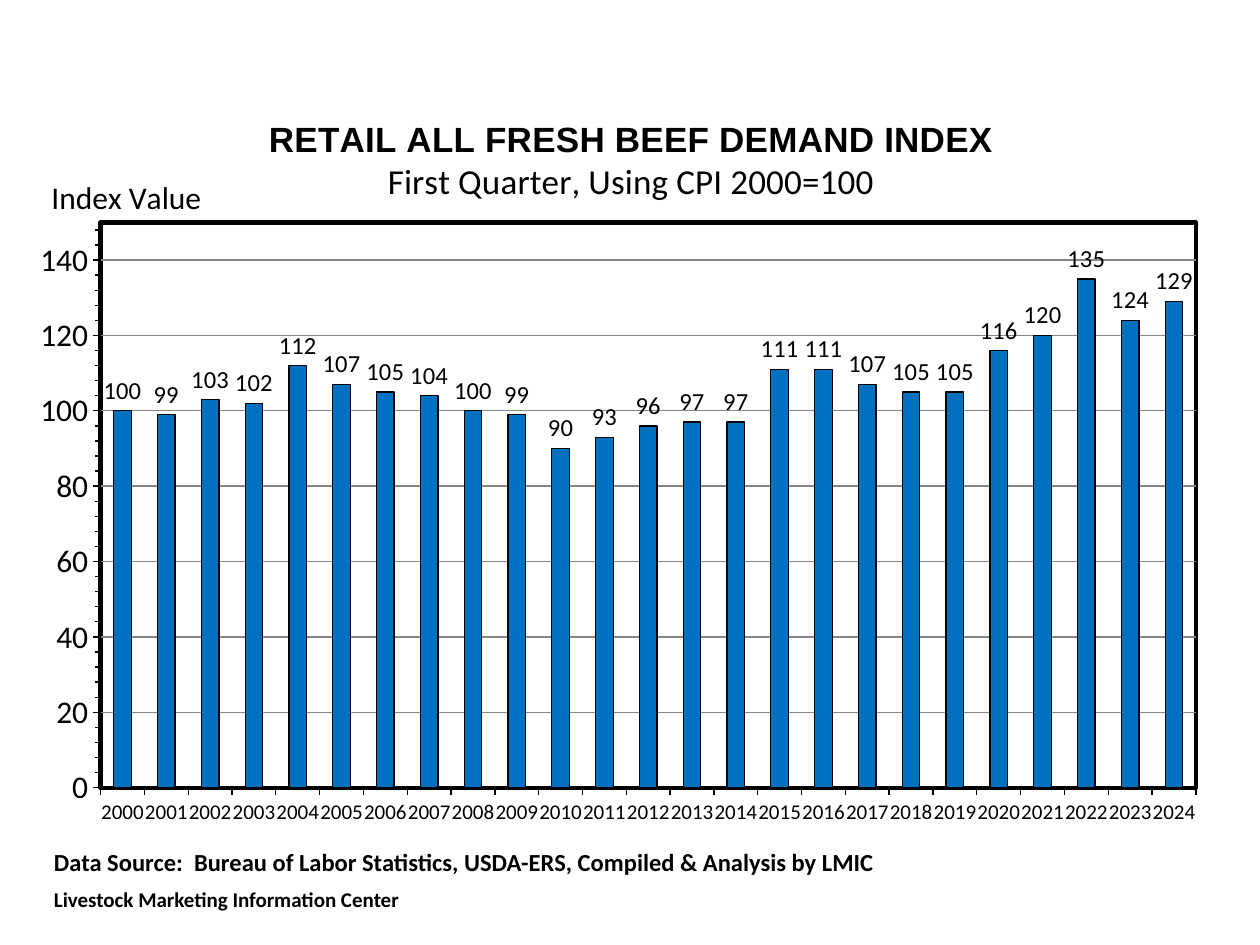
"""Build the retail all fresh beef demand index slide."""
from lxml.etree import SubElement
from pptx import Presentation
from pptx.chart.data import CategoryChartData
from pptx.dml.color import RGBColor
from pptx.enum.chart import XL_CHART_TYPE as ChartType
from pptx.enum.chart import XL_LABEL_POSITION as LabelPos
from pptx.enum.chart import XL_TICK_MARK as Tick
from pptx.oxml import parse_xml
from pptx.oxml.ns import nsdecls, qn
from pptx.util import Pt

COLORS = {"text": "000000", "bar": "0070C0", "grid": "868686", "plot": "FFFFFF"}
FIRST_YEAR = 2000
INDEX = [100, 99, 103, 102, 112, 107, 105, 104, 100, 99, 90, 93, 96,
         97, 97, 111, 111, 107, 105, 105, 116, 120, 135, 124, 129]
TITLE = [("RETAIL ALL FRESH BEEF DEMAND INDEX", "Arial", 20, True),
         ("First Quarter, Using CPI 2000=100", "Calibri", 20, False)]
AXIS_TITLE = [("Index Value", "Calibri", 18, False)]
SOURCE = [("Data Source:  Bureau of Labor Statistics, USDA-ERS, "
           "Compiled & Analysis by LMIC", "Calibri", 14, True),
          ("Livestock Marketing Information Center", "Calibri", 12, True)]
CHART_BOX = (12.24, 48.24, 696.24, 426.24)
SOURCE_BOX = (23.76, 480.24, 497.52, 46.08)
PLOT_LAYOUT = {"x": 0.07, "y": 0.19, "w": 0.9, "h": 0.76}
PLOT_LAYOUT = {"x": 0.065, "y": 0.185, "w": 0.899, "h": 0.758}


def rgb(name):
    return RGBColor.from_string(COLORS[name])


def set_font(font, name, size, bold=False):
    font.name, font.size, font.bold = name, Pt(size), bold
    font.color.rgb = rgb("text")


def set_line(line, color, width):
    line.color.rgb = rgb(color)
    line.width = Pt(width)


def write(tf, lines, space=0):
    for i, (text, *style) in enumerate(lines):
        p = tf.add_paragraph() if i else tf.paragraphs[0]
        if i:
            p.space_before = Pt(space)
        r = p.add_run()
        r.text = text
        set_font(r.font, *style)


def set_layout(parent, index, target=None, **place):
    for old in parent.findall(qn("c:layout")):
        parent.remove(old)
    layout = parse_xml(f"<c:layout {nsdecls('c')}/>")
    manual = SubElement(layout, qn("c:manualLayout"))
    if target:
        SubElement(manual, qn("c:layoutTarget")).set("val", target)
    for key in ("x", "y"):
        SubElement(manual, qn(f"c:{key}Mode")).set("val", "edge")
    for key, value in place.items():
        SubElement(manual, qn(f"c:{key}")).set("val", str(value))
    parent.insert(index, layout)


def add_index_chart(s):
    data = CategoryChartData(number_format="General")
    data.categories = [str(FIRST_YEAR + i) for i in range(len(INDEX))]
    data.add_series("Series 1", INDEX)
    chart = s.shapes.add_chart(ChartType.COLUMN_CLUSTERED, *map(Pt, CHART_BOX), data).chart
    set_font(chart.font, "Calibri", 18)
    chart.has_legend = False
    write(chart.chart_title.text_frame, TITLE)
    set_layout(chart.chart_title._element, 1, x=0.2, y=0.04)

    plot = chart.plots[0]
    plot.gap_width, plot.vary_by_categories = 150, False
    bars = plot.series[0].format
    bars.fill.solid()
    bars.fill.fore_color.rgb = rgb("bar")
    set_line(bars.line, "text", 0.75)
    plot.has_data_labels = True
    labels = plot.data_labels
    labels.show_value, labels.position = True, LabelPos.OUTSIDE_END
    labels.number_format, labels.number_format_is_linked = "#,##0", False
    set_font(labels.font, "Calibri", 14)

    years, values = chart.category_axis, chart.value_axis
    for axis, size in ((years, 12), (values, 18)):
        axis.major_tick_mark = Tick.OUTSIDE
        set_font(axis.tick_labels.font, "Calibri", size)
        set_line(axis.format.line, "text", 0.75)
    values.minimum_scale, values.maximum_scale = 0, 150
    values.major_unit, values.minor_unit = 20, 4
    values.minor_tick_mark = Tick.OUTSIDE
    set_line(values.major_gridlines.format.line, "grid", 0.75)
    tf = values.axis_title.text_frame
    write(tf, AXIS_TITLE)
    body = tf._txBody.bodyPr
    body.set("rot", "0")
    body.set("vert", "horz")
    set_layout(values.axis_title._element, 1, x=0.02, y=0.115)

    area = chart._chartSpace.chart.plotArea
    set_layout(area, 0, "inner", **PLOT_LAYOUT)
    area.append(parse_xml(
        f'<c:spPr {nsdecls("c", "a")}><a:solidFill><a:srgbClr val="{COLORS["plot"]}"/>'
        f'</a:solidFill><a:ln w="{Pt(2.5)}"><a:solidFill><a:srgbClr val="{COLORS["text"]}"/>'
        "</a:solidFill></a:ln></c:spPr>"))


def main():
    prs = Presentation()
    prs.slide_width, prs.slide_height = Pt(720), Pt(540)
    s = prs.slides.add_slide(prs.slide_layouts[6])
    add_index_chart(s)
    tf = s.shapes.add_textbox(*map(Pt, SOURCE_BOX)).text_frame
    tf.word_wrap = True
    write(tf, SOURCE, space=6)
    prs.save("out.pptx")


if __name__ == "__main__":
    main()
